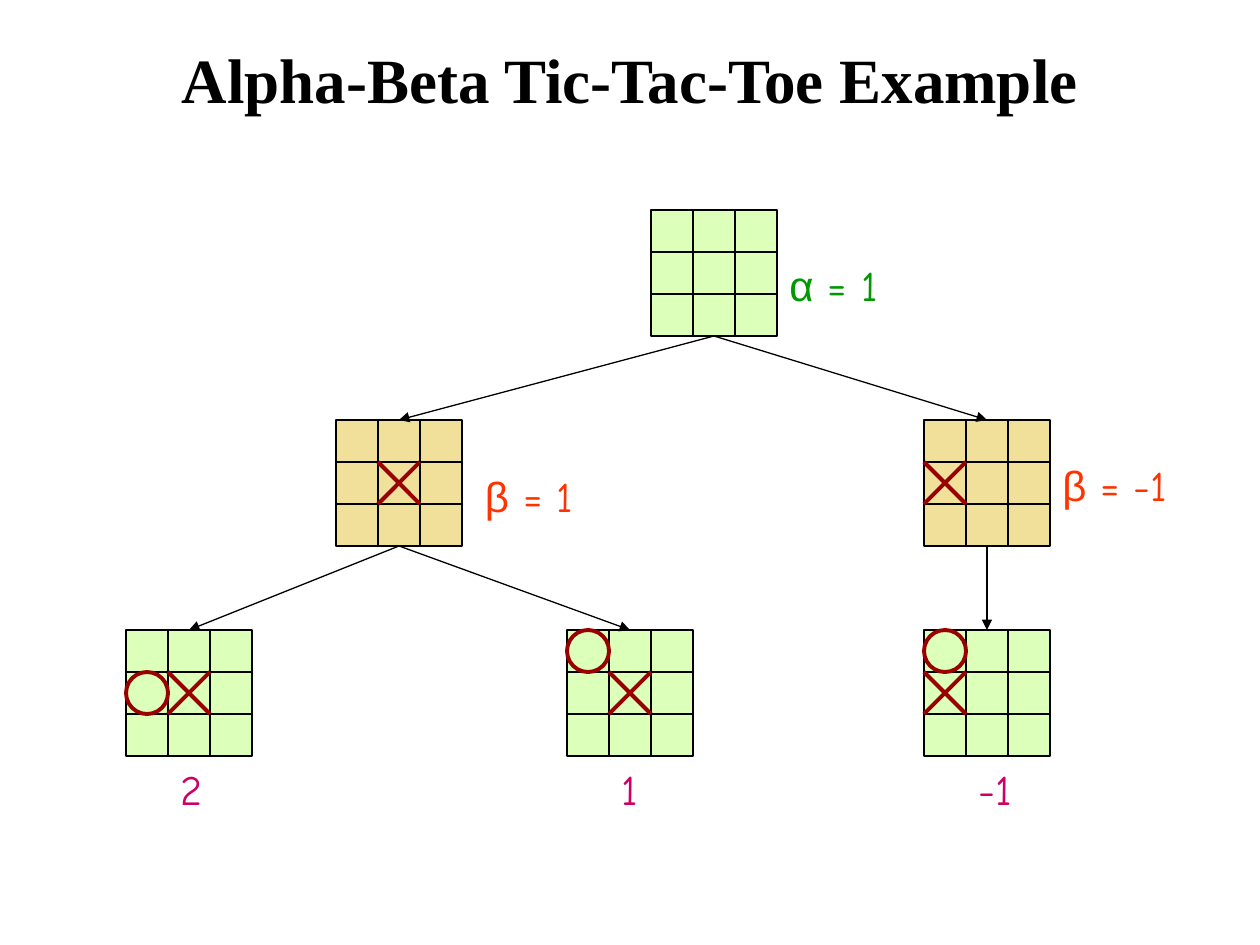
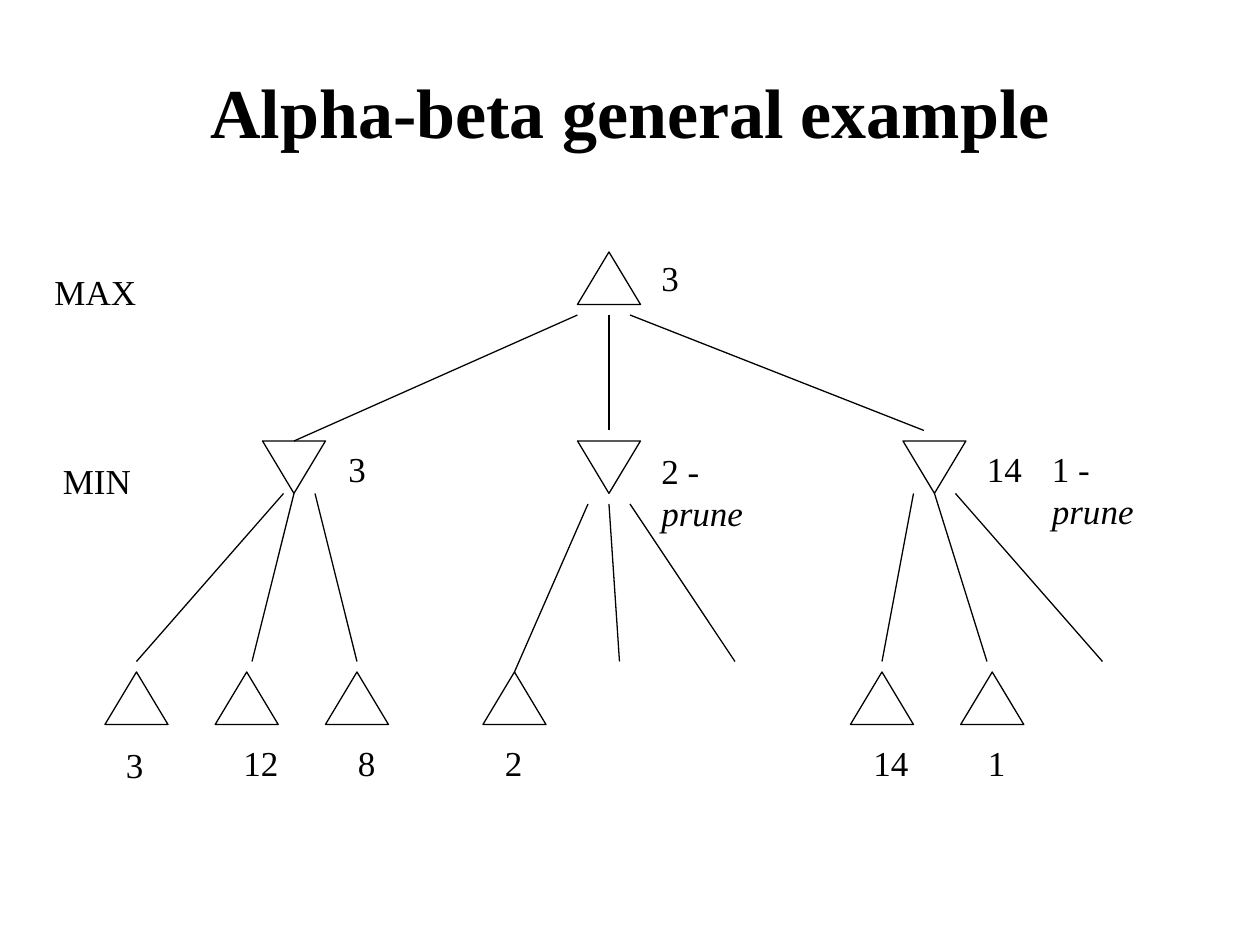
from dataclasses import dataclass
from typing import Any

from lxml.etree import SubElement
from pptx import Presentation
from pptx.dml.color import RGBColor
from pptx.enum.shapes import MSO_CONNECTOR, MSO_SHAPE
from pptx.enum.text import MSO_ANCHOR, MSO_AUTO_SIZE, PP_ALIGN
from pptx.oxml.ns import qn
from pptx.util import Emu, Pt

PX = 7620
WIDTH, HEIGHT = 1200, 900
CELL = 40
BOARD = 3 * CELL
TRI_W, TRI_H = 60, 50
TITLE_X, TITLE_W, TITLE_H = 90, 1020, 150
BOTTOM, TOP = 2, 0


@dataclass(frozen=True)
class Theme:
    black: str = "000000"
    white: str = "FFFFFF"
    max_fill: str = "DCFFB9"
    min_fill: str = "F0E09A"
    mark: str = "990000"
    alpha: str = "009900"
    beta: str = "FF3300"
    score: str = "CC0066"
    serif: str = "Times New Roman"
    greek: str = "Arial"
    hand: str = "Comic Neue"
    label_size: int = 24
    value_size: int = 20
    thin: float = 0.75
    thick: float = 2.25


THEME = Theme()


@dataclass(frozen=True)
class Run:
    text: str
    font: str = THEME.serif
    size: int = THEME.value_size
    color: str = THEME.black
    italic: bool = False
    bold: bool = False


@dataclass(frozen=True)
class Label:
    x: int
    y: int
    w: int
    h: int
    runs: tuple[Run, ...]


@dataclass(frozen=True)
class Board:
    x: int
    y: int
    fill: str
    cross: tuple[int, int] | None = None
    nought: tuple[int, int] | None = None


@dataclass(frozen=True)
class Node:
    x: int
    y: int
    is_min: bool = False


@dataclass(frozen=True)
class Edge:
    x1: int
    y1: int
    x2: int
    y2: int


def px(n: float) -> Emu:
    return Emu(round(n * PX))


def rgb(color: str) -> RGBColor:
    return RGBColor.from_string(color)


def apply(target: Any, values: dict[str, Any]) -> None:
    for name, value in values.items():
        setattr(target, name, value)


def add_run(p: Any, run: Run) -> None:
    r = p.add_run()
    r.text = run.text
    apply(r.font, {"name": run.font, "size": Pt(run.size),
                   "italic": run.italic, "bold": run.bold})
    r.font.color.rgb = rgb(run.color)


def add_title(s: Any, text: str, y: int, size: int) -> None:
    sp = s.shapes.title
    apply(sp, {"left": px(TITLE_X), "top": px(y),
               "width": px(TITLE_W), "height": px(TITLE_H)})
    tf = sp.text_frame
    apply(tf, {"vertical_anchor": MSO_ANCHOR.MIDDLE, "word_wrap": True,
               "auto_size": MSO_AUTO_SIZE.NONE})
    p = tf.paragraphs[0]
    p.alignment = PP_ALIGN.CENTER
    add_run(p, Run(text, size=size, bold=True))


def add_label(s: Any, label: Label) -> None:
    sp = s.shapes.add_textbox(px(label.x), px(label.y), px(label.w), px(label.h))
    tf = sp.text_frame
    apply(tf, {"word_wrap": False, "auto_size": MSO_AUTO_SIZE.SHAPE_TO_FIT_TEXT})
    for run in label.runs:
        add_run(tf.paragraphs[0], run)


def add_figure(s: Any, kind: MSO_SHAPE, x: int, y: int, w: int, h: int,
               fill: str | None, line: str = THEME.black,
               weight: float = THEME.thin) -> Any:
    sp = s.shapes.add_shape(kind, px(x), px(y), px(w), px(h))
    sp.shadow.inherit = False
    if fill is None:
        sp.fill.background()
    else:
        sp.fill.solid()
        sp.fill.fore_color.rgb = rgb(fill)
    sp.line.color.rgb = rgb(line)
    sp.line.width = Pt(weight)
    return sp


def add_line(s: Any, edge: Edge, color: str = THEME.black,
             weight: float = THEME.thin) -> Any:
    c = s.shapes.add_connector(MSO_CONNECTOR.STRAIGHT, px(edge.x1), px(edge.y1),
                               px(edge.x2), px(edge.y2))
    c.line.color.rgb = rgb(color)
    c.line.width = Pt(weight)
    SubElement(c._element.spPr, qn("a:effectLst"))
    return c


def add_arrow(s: Any, parent: Any, child: Any) -> None:
    c = add_line(s, Edge(0, 0, 0, 0))
    c.begin_connect(parent, BOTTOM)
    c.end_connect(child, TOP)
    SubElement(c.line._get_or_add_ln(), qn("a:tailEnd"), type="triangle")


def add_board(s: Any, board: Board) -> Any:
    x, y = board.x, board.y
    frame = add_figure(s, MSO_SHAPE.RECTANGLE, x, y, BOARD, BOARD, board.fill)
    for d in (CELL, 2 * CELL):
        add_line(s, Edge(x + d, y, x + d, y + BOARD))
        add_line(s, Edge(x, y + d, x + BOARD, y + d))
    if board.cross:
        col, row = board.cross
        left, top = x + col * CELL, y + row * CELL
        right, bottom = left + CELL, top + CELL
        for edge in (Edge(left, top, right, bottom), Edge(left, bottom, right, top)):
            add_line(s, edge, THEME.mark, THEME.thick)
    if board.nought:
        col, row = board.nought
        add_figure(s, MSO_SHAPE.OVAL, x + col * CELL, y + row * CELL, CELL, CELL,
                   None, THEME.mark, THEME.thick)
    return frame


def add_node(s: Any, node: Node) -> None:
    sp = add_figure(s, MSO_SHAPE.ISOSCELES_TRIANGLE, node.x, node.y, TRI_W, TRI_H,
                    THEME.white)
    if node.is_min:
        sp._element.spPr.xfrm.set("flipV", "1")


def bound(x: int, y: int, w: int, letter: str, value: str, color: str) -> Label:
    return Label(x, y, w, 60, (Run(letter, THEME.greek, THEME.label_size, color),
                               Run(f" = {value}", THEME.hand, THEME.label_size, color)))


def score(x: int, w: int, value: str) -> Label:
    return Label(x, 721, w, 60,
                 (Run(value, THEME.hand, THEME.label_size, THEME.score),))


def value(x: int, y: int, w: int, text: str, note: str = "") -> Label:
    runs = (Run(text), Run(note, italic=True)) if note else (Run(text),)
    return Label(x, y, w, 52, runs)


BOARDS = {
    "root": Board(620, 200, THEME.max_fill),
    "centre": Board(320, 400, THEME.min_fill, (1, 1)),
    "side": Board(880, 400, THEME.min_fill, (0, 1)),
    "centre_left": Board(120, 600, THEME.max_fill, (1, 1), (0, 1)),
    "centre_corner": Board(540, 600, THEME.max_fill, (1, 1), (0, 0)),
    "side_corner": Board(880, 600, THEME.max_fill, (0, 1), (0, 0)),
}
MOVES = (("root", "centre"), ("root", "side"), ("centre", "centre_left"),
         ("centre", "centre_corner"), ("side", "side_corner"))
BOARD_LABELS = (
    bound(740, 241, 112, "α", "1", THEME.alpha),
    bound(450, 442, 108, "β", "1", THEME.beta),
    bound(1000, 432, 137, "β", "-1", THEME.beta),
    score(160, 48, "2"), score(580, 42, "1"), score(920, 59, "-1"),
)

NODES = (
    Node(550, 240),
    *(Node(x, 420, True) for x in (250, 550, 860)),
    *(Node(x, 640) for x in (100, 205, 310, 460, 810, 915)),
)
EDGES = (
    Edge(550, 300, 280, 420), Edge(580, 300, 580, 410), Edge(600, 300, 880, 410),
    Edge(270, 470, 130, 630), Edge(280, 470, 240, 630), Edge(300, 470, 340, 630),
    Edge(560, 480, 490, 640), Edge(580, 480, 590, 630), Edge(600, 480, 700, 630),
    Edge(870, 470, 840, 630), Edge(890, 470, 940, 630), Edge(910, 470, 1050, 630),
)
NODE_LABELS = (
    value(40, 252, 102, "MAX"), value(48, 432, 89, "MIN"),
    value(618, 238, 41, "3"), value(320, 420, 41, "3"),
    value(618, 422, 146, "2 - ", "prune"),
    value(928, 420, 58, "14"), value(990, 420, 146, "1 - ", "prune"),
    value(108, 702, 41, "3"), value(220, 700, 58, "12"), value(329, 700, 41, "8"),
    value(469, 700, 41, "2"), value(820, 700, 58, "14"), value(929, 700, 41, "1"),
)


def build_tic_tac_toe(s: Any) -> None:
    add_title(s, "Alpha-Beta Tic-Tac-Toe Example", 0, 36)
    frames = {name: add_board(s, board) for name, board in BOARDS.items()}
    for parent, child in MOVES:
        add_arrow(s, frames[parent], frames[child])
    for label in BOARD_LABELS:
        add_label(s, label)


def build_general(s: Any) -> None:
    add_title(s, "Alpha-beta general example", 30, 40)
    for node in NODES:
        add_node(s, node)
    for edge in EDGES:
        add_line(s, edge)
    for label in NODE_LABELS:
        add_label(s, label)


def main() -> None:
    prs = Presentation()
    apply(prs, {"slide_width": px(WIDTH), "slide_height": px(HEIGHT)})
    for build in (build_tic_tac_toe, build_general):
        build(prs.slides.add_slide(prs.slide_layouts[5]))
    prs.save("out.pptx")


if __name__ == "__main__":
    main()
